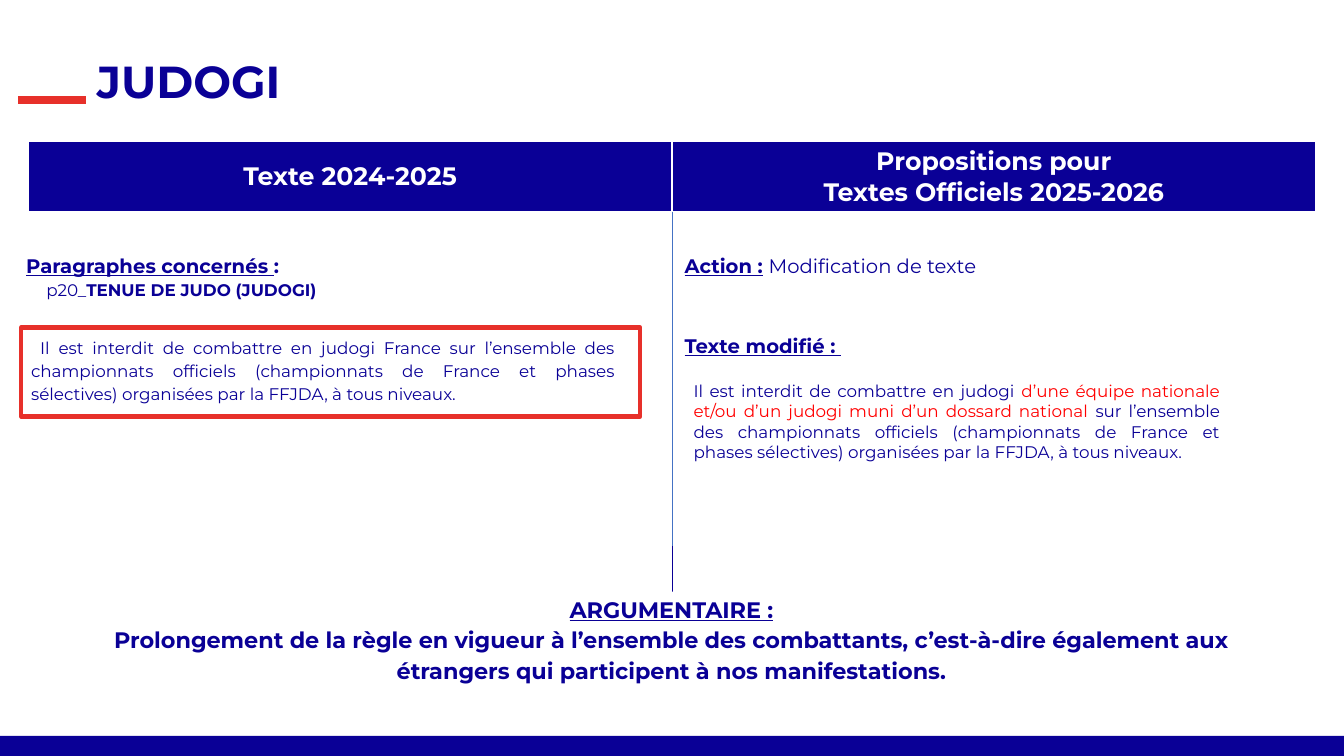
from lxml import etree
from pptx import Presentation
from pptx.dml.color import RGBColor
from pptx.enum.shapes import MSO_CONNECTOR, MSO_SHAPE
from pptx.enum.text import MSO_ANCHOR, MSO_AUTO_SIZE, PP_ALIGN
from pptx.oxml.ns import qn
from pptx.util import Inches, Pt

LEFT, CENTER, JUSTIFY = PP_ALIGN.LEFT, PP_ALIGN.CENTER, PP_ALIGN.JUSTIFY
TOP, MIDDLE = MSO_ANCHOR.TOP, MSO_ANCHOR.MIDDLE
NO_FIT = MSO_AUTO_SIZE.NONE
RECT = MSO_SHAPE.RECTANGLE
STRAIGHT = MSO_CONNECTOR.STRAIGHT

FONT = "Montserrat"
NAVY, RED, PURE_RED, BLUE, WHITE = "0A0096", "E7302A", "FF0000", "4472C4", "FFFFFF"
SLIDE_W, SLIDE_H = 13.33, 7.5
MID_X = 6.67
BAR_H = 0.2
TABLE = (0.28, 1.4, 12.77, 0.7)
NO_INSET = (0, 0)
INSET = (0.1, 0.05)

TITLE = [dict(runs=[("JUDOGI", 32, "b", NAVY)], spacing=0.9)]
HEADERS = [
    ["Texte 2024-2025"],
    ["Propositions pour", "Textes Officiels 2025-2026"],
]
CONCERNED = [
    dict(runs=[("Paragraphes concernés ", 14, "bu", NAVY), (":", 14, "b", NAVY)],
         spacing=1.15),
    dict(runs=[("p20_", 12, "", NAVY), ("TENUE DE JUDO (JUDOGI)", 12, "b", NAVY)],
         spacing=1.15, left=0.2),
]
ACTION = [
    dict(runs=[("Action :", 14, "bu", NAVY), (" ", 14, "b", NAVY),
               ("Modification de texte", 14, "", NAVY)],
         align=JUSTIFY, spacing=1.15),
    dict(runs=[("Texte modifié : ", 14, "bu", NAVY)],
         align=JUSTIFY, spacing=1.15, before=38),
]
CURRENT_RULE = [
    dict(runs=[("Il est interdit de combattre en judogi France sur l’ensemble des "
                "championnats officiels (championnats de France et phases sélectives) "
                "organisées par la FFJDA, à tous niveaux.", 12, "", NAVY)],
         align=JUSTIFY, spacing=1.15, indent=0.09),
]
NEW_RULE = [
    dict(runs=[("Il est interdit de combattre en judogi ", 12, "", NAVY),
               ("d’une équipe nationale et/ou d’un judogi muni d’un dossard national ",
                12, "", PURE_RED),
               ("sur l’ensemble des championnats officiels (championnats de France et "
                "phases sélectives) organisées par la FFJDA, à tous niveaux.",
                12, "", NAVY)],
         align=JUSTIFY),
]
ARGUMENT = [
    dict(runs=[("ARGUMENTAIRE :", 16, "bu", NAVY)], align=CENTER, spacing=1.15),
    dict(runs=[("Prolongement de la règle en vigueur à l’ensemble des combattants, "
                "c’est-à-dire également aux étrangers qui participent à nos "
                "manifestations.", 16, "b", NAVY)],
         align=CENTER, spacing=1.15),
]
TEXT_BOXES = [
    ((0.26, 2.48, 5.88, 0.6), CONCERNED, NO_INSET),
    ((6.79, 2.48, 6.14, 1.1), ACTION, NO_INSET),
    ((0.21, 3.27, 5.99, 0.78), CURRENT_RULE, INSET),
    ((6.78, 3.73, 5.42, 0.91), NEW_RULE, INSET),
]


def rgb(value):
    return RGBColor.from_string(value)


def inches(values):
    return [Inches(v) for v in values]


def write(tf, paragraphs, inset=INSET):
    tf.word_wrap = True
    tf.auto_size = NO_FIT
    tf.vertical_anchor = TOP
    tf.margin_left = tf.margin_right = Inches(inset[0])
    tf.margin_top = tf.margin_bottom = Inches(inset[1])
    fill_paragraphs(tf, paragraphs)


def fill_paragraphs(tf, paragraphs):
    for i, para in enumerate(paragraphs):
        p = tf.add_paragraph() if i else tf.paragraphs[0]
        p.alignment = para.get("align", LEFT)
        p.line_spacing = para.get("spacing", 1.0)
        p.space_before = Pt(para.get("before", 0))
        pPr = p._p.get_or_add_pPr()
        pPr.set("marL", str(Inches(para.get("left", 0))))
        pPr.set("indent", str(Inches(para.get("indent", 0))))
        for text, size, style, color in para["runs"]:
            r = p.add_run()
            r.text = text
            r.font.name = FONT
            r.font.size = Pt(size)
            r.font.bold = "b" in style
            r.font.underline = "u" in style
            r.font.color.rgb = rgb(color)


def add_rect(s, box, fill=None, line=None, width=0):
    sp = s.shapes.add_shape(RECT, *inches(box))
    sp.shadow.inherit = False
    if fill:
        sp.fill.solid()
        sp.fill.fore_color.rgb = rgb(fill)
    else:
        sp.fill.background()
    if line:
        sp.line.color.rgb = rgb(line)
        sp.line.width = Pt(width)
    else:
        sp.line.fill.background()
    return sp


def add_line(s, start, end, color, width):
    cxn = s.shapes.add_connector(STRAIGHT, *inches(start + end))
    cxn.line.color.rgb = rgb(color)
    cxn.line.width = Pt(width)
    etree.SubElement(cxn._element.spPr, qn("a:effectLst"))


def set_borders(cell, color, widths):
    tcPr = cell._tc.get_or_add_tcPr()
    for i, (side, width) in enumerate(widths):
        ln = etree.Element(qn(f"a:{side}"), w=str(Pt(width)))
        fill = etree.SubElement(ln, qn("a:solidFill"))
        etree.SubElement(fill, qn("a:srgbClr"), val=color)
        tcPr.insert(i, ln)


def add_header_table(s):
    table = s.shapes.add_table(1, len(HEADERS), *inches(TABLE)).table
    table.first_row = table.horz_banding = False
    for i, lines in enumerate(HEADERS):
        cell = table.cell(0, i)
        cell.fill.solid()
        cell.fill.fore_color.rgb = rgb(NAVY)
        cell.vertical_anchor = MIDDLE
        fill_paragraphs(cell.text_frame, [
            dict(runs=[(line, 18, "b", WHITE)], align=CENTER) for line in lines])
        set_borders(cell, WHITE, [("lnL", 1), ("lnR", 1), ("lnT", 1), ("lnB", 3)])


def main():
    prs = Presentation()
    prs.slide_width, prs.slide_height = inches((SLIDE_W, SLIDE_H))
    s = prs.slides.add_slide(prs.slide_layouts[5])

    title = s.shapes.title
    title.left, title.top, title.width, title.height = inches((0.86, 0.54, 12.47, 0.67))
    write(title.text_frame, TITLE)

    add_rect(s, (0, SLIDE_H - BAR_H, SLIDE_W, BAR_H), fill=NAVY)
    add_line(s, (MID_X, 1.79), (MID_X, 6.79), NAVY, 0.5)
    add_line(s, (0.18, 0.99), (0.85, 0.99), RED, 6)
    add_rect(s, (0.21, 3.25, 6.14, 0.88), line=RED, width=3.25)
    add_header_table(s)
    add_line(s, (MID_X, 2.1), (MID_X, 5.42), BLUE, 0.5)

    argument = add_rect(s, (0.72, 5.87, 11.88, 1.37), fill=WHITE)
    write(argument.text_frame, ARGUMENT, NO_INSET)

    for box, paragraphs, inset in TEXT_BOXES:
        tb = s.shapes.add_textbox(*inches(box))
        write(tb.text_frame, paragraphs, inset)

    prs.save("out.pptx")


if __name__ == "__main__":
    main()
